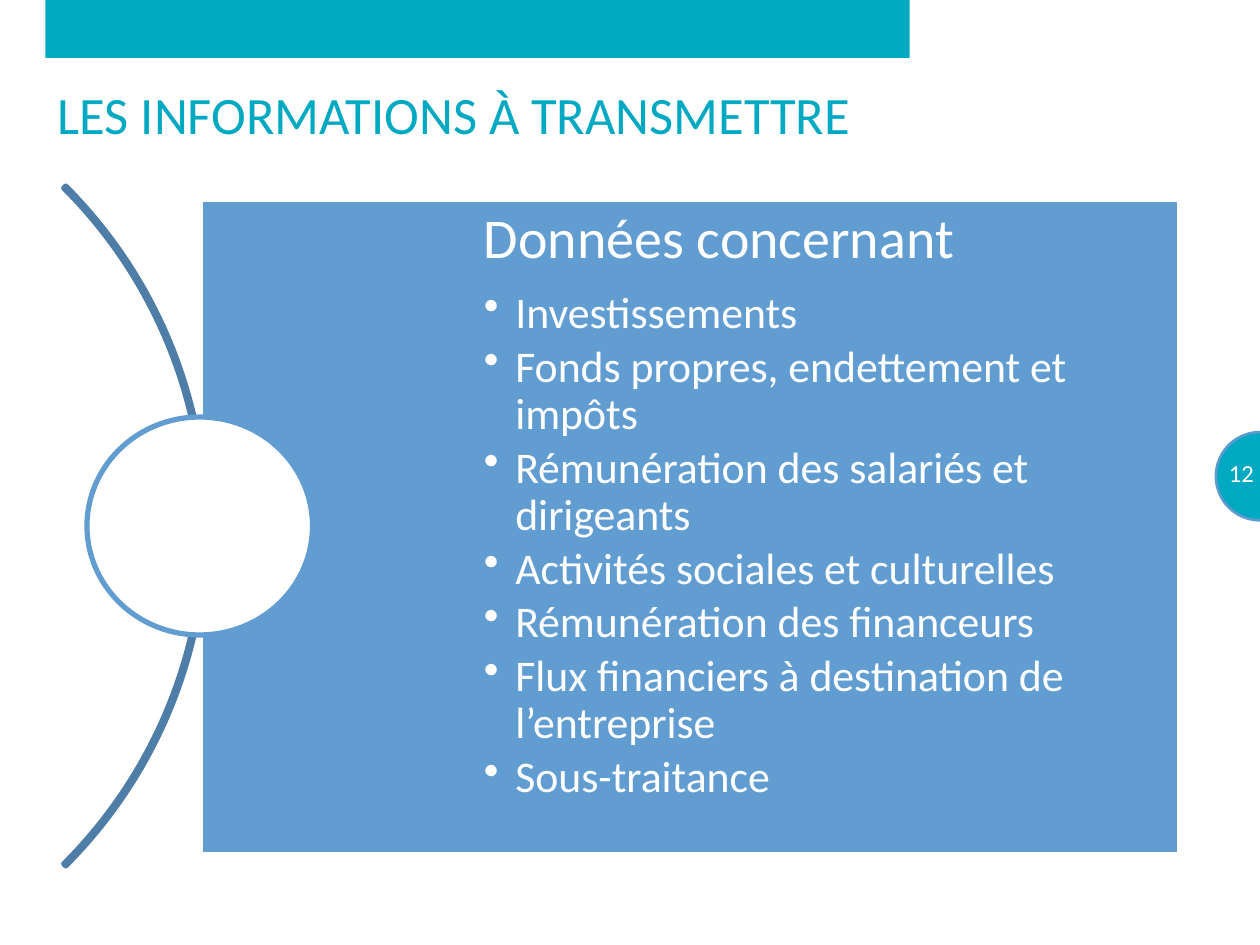
"""Build the slide listing the information to hand over."""
import dataclasses
import typing

import lxml.etree
import pptx
import pptx.dml.color
import pptx.enum.shapes
import pptx.enum.text
import pptx.oxml.ns
import pptx.util

Inches = pptx.util.Inches
Pt = pptx.util.Pt
Kind = pptx.enum.shapes.MSO_SHAPE
Align = pptx.enum.text.PP_ALIGN
Anchor = pptx.enum.text.MSO_ANCHOR


@dataclasses.dataclass(frozen=True)
class Theme:
    """Hold the colours, the font and the type sizes."""
    teal: str = "00A9C2"
    blue: str = "629DD1"
    ring: str = "5D9ACF"
    arc: str = "4E7EA7"
    white: str = "FFFFFF"
    font: str = "Calibri"
    title: int = 30
    head: int = 32
    item: int = 25
    page: int = 14


THEME = Theme()


class Form(typing.NamedTuple):
    """Describe one drawn shape."""
    kind: Kind
    box: tuple
    fill: typing.Optional[str] = None
    line: typing.Optional[str] = None
    width: float = 3
    turns: tuple = ()


class Para(typing.NamedTuple):
    """Describe one paragraph."""
    text: str
    size: int
    color: str = THEME.white
    form: dict = {}
    dot: bool = False


BAND = Form(Kind.RECTANGLE, (0.36, 0, 6.86, 0.46), THEME.teal)
BADGE = Form(Kind.OVAL, (9.65, 3.43, 0.7, 0.7), THEME.teal, THEME.ring, 1.5)
ARC = Form(Kind.BLOCK_ARC, (-5.99, 0.36, 7.63, 7.63), None, THEME.arc,
           turns=(189, 27, 0.003))
PANEL = Form(Kind.RECTANGLE, (1.59, 1.58, 7.77, 5.2), THEME.blue, THEME.white)
DISC = Form(Kind.OVAL, (0.69, 3.31, 1.79, 1.73), THEME.white, THEME.blue)

ITEMS = (
    "Investissements",
    "Fonds propres, endettement et impôts",
    "Rémunération des salariés et dirigeants",
    "Activités sociales et culturelles",
    "Rémunération des financeurs",
    "Flux financiers à destination de l’entreprise",
    "Sous-traitance",
)


def apply(target: typing.Any, form: dict) -> None:
    """Set each named format value on the target."""
    for name, value in form.items():
        setattr(target, name, value)


def color(code: str) -> pptx.dml.color.RGBColor:
    """Turn a hex code into a colour."""
    return pptx.dml.color.RGBColor.from_string(code)


def paint(fill: typing.Any, code: typing.Optional[str]) -> None:
    """Fill with a solid colour, or with nothing."""
    if code is None:
        fill.background()
    else:
        fill.solid()
        fill.fore_color.rgb = color(code)


def draw(slide: typing.Any, form: Form) -> typing.Any:
    """Draw one shape and return it."""
    shape = slide.shapes.add_shape(form.kind, *map(Inches, form.box))
    shape.shadow.inherit = False
    for spot, turn in enumerate(form.turns):
        shape.adjustments[spot] = turn
    paint(shape.fill, form.fill)
    paint(shape.line.fill, form.line)
    if form.line:
        shape.line.width = Pt(form.width)
    return shape


def bullet(para: typing.Any) -> None:
    """Give a paragraph a hanging round bullet."""
    props = para._p.get_or_add_pPr()
    apply(para, {"level": 1})
    props.set("marL", str(Inches(0.25)))
    props.set("indent", str(Inches(-0.25)))
    mark = lxml.etree.SubElement(props, pptx.oxml.ns.qn("a:buChar"))
    mark.set("char", "•")


def write(shape: typing.Any, paras: typing.Sequence[Para], form: dict) -> None:
    """Write paragraphs into the frame of a shape."""
    frame = shape.text_frame
    apply(frame, {"word_wrap": True, "vertical_anchor": Anchor.TOP, **form})
    for spot, part in enumerate(paras):
        para = frame.add_paragraph() if spot else frame.paragraphs[0]
        if part.dot:
            bullet(para)
        apply(para, {"alignment": Align.LEFT, **part.form})
        run = para.add_run()
        run.text = part.text
        apply(run.font, {"name": THEME.font, "size": Pt(part.size)})
        run.font.color.rgb = color(part.color)


def label(slide: typing.Any, box: tuple, para: Para, form: dict) -> None:
    """Add a text box that holds one paragraph."""
    write(slide.shapes.add_textbox(*map(Inches, box)), [para], form)


def main() -> None:
    """Build and save the deck."""
    deck = pptx.Presentation()
    apply(deck, {"slide_width": Inches(10), "slide_height": Inches(7.5)})
    slide = deck.slides.add_slide(deck.slide_layouts[6])

    draw(slide, BAND)
    draw(slide, BADGE)
    label(slide, (9.62, 3.55, 0.43, 0.4),
          Para("12", THEME.page, form={"alignment": Align.RIGHT}),
          {"vertical_anchor": Anchor.MIDDLE})
    label(slide, (0.36, 0.6, 9.29, 0.77),
          Para("LES INFORMATIONS À TRANSMETTRE", THEME.title, THEME.teal), {})

    draw(slide, ARC)
    panel = draw(slide, PANEL)
    head = Para("Données concernant", THEME.head,
                form={"line_spacing": 0.9, "space_after": Pt(11.2)})
    gaps = {"line_spacing": 0.9, "space_after": Pt(3.75)}
    items = [Para(text, THEME.item, form=gaps, dot=True) for text in ITEMS]
    edge = Inches(0.09)
    write(panel, [head, *items],
          {"margin_left": Inches(2.25), "margin_top": edge,
           "margin_right": edge, "margin_bottom": edge})
    draw(slide, DISC)
    deck.save("out.pptx")


if __name__ == "__main__":
    main()
